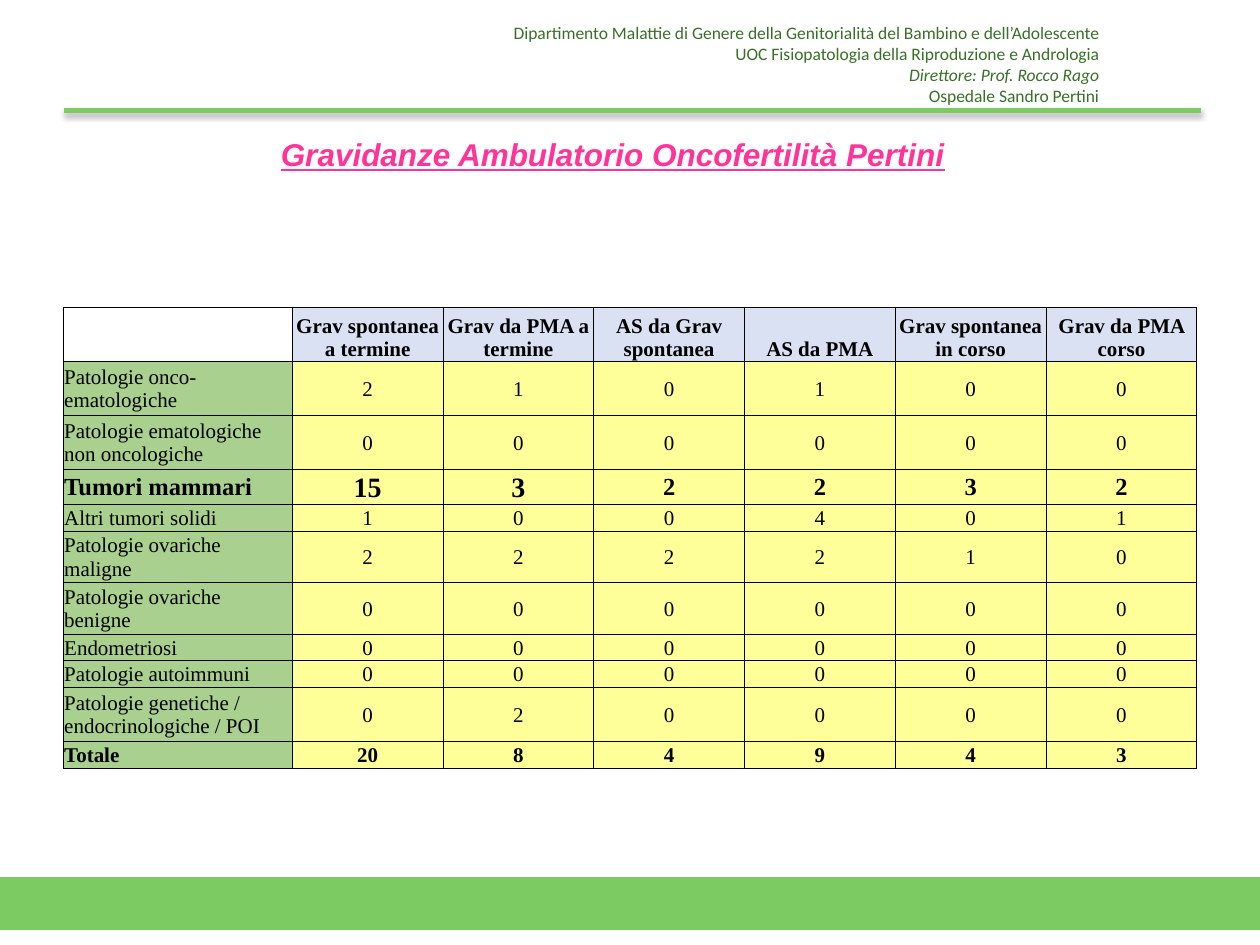
import pptx
import pptx.util
import pptx.dml.color
import pptx.enum.shapes
import pptx.enum.text
import pptx.oxml
import pptx.oxml.ns

THEME = {
    "green": "7CCA62", "letterhead": "387026", "title": "FF3399", "ink": "000000",
    "heading_fill": "D9E1F2", "label_fill": "A9D08E", "count_fill": "FFFF99",
    "letterhead_font": "Calibri", "title_font": "Arial", "table_font": "Times New Roman",
    "letterhead_size": 10, "title_size": 18, "table_size": 12,
    "strong_size": 14, "peak_size": 16,
}

LETTERHEAD = [
    "Dipartimento Malattie di Genere della Genitorialità del Bambino e dell’Adolescente",
    "UOC Fisiopatologia della Riproduzione e Andrologia",
    "Direttore: Prof. Rocco Rago",
    "Ospedale Sandro Pertini",
]
DIRECTOR = LETTERHEAD[2]
TITLE = "Gravidanze Ambulatorio Oncofertilità Pertini"
HEADINGS = ["", "Grav spontanea a termine", "Grav da PMA a termine", "AS da Grav spontanea",
            "AS da PMA", "Grav spontanea in corso", "Grav da PMA corso"]
PATHOLOGIES = [
    ("Patologie onco-ematologiche", 2, 1, 0, 1, 0, 0),
    ("Patologie ematologiche non oncologiche", 0, 0, 0, 0, 0, 0),
    ("Tumori mammari", 15, 3, 2, 2, 3, 2),
    ("Altri tumori solidi", 1, 0, 0, 4, 0, 1),
    ("Patologie ovariche maligne", 2, 2, 2, 2, 1, 0),
    ("Patologie ovariche benigne", 0, 0, 0, 0, 0, 0),
    ("Endometriosi", 0, 0, 0, 0, 0, 0),
    ("Patologie autoimmuni", 0, 0, 0, 0, 0, 0),
    ("Patologie genetiche / endocrinologiche / POI", 0, 2, 0, 0, 0, 0),
    ("Totale", 20, 8, 4, 9, 4, 3),
]
HIGHLIGHT, TOTAL = 3, len(PATHOLOGIES)
ROW_HEIGHTS = [0.43, 0.43, 0.43, 0.27, 0.21, 0.41, 0.41, 0.21, 0.21, 0.43, 0.21]
WIDTH, HEIGHT = 10, 7.5
TABLE_WIDTH, LABEL_WIDTH = 0.9 * WIDTH, 1.82

Inches, Pt = pptx.util.Inches, pptx.util.Pt
ALIGN, ANCHOR = pptx.enum.text.PP_ALIGN, pptx.enum.text.MSO_ANCHOR


def colour(name):
    return pptx.dml.color.RGBColor.from_string(THEME[name])


def share(left, top, width, height):
    return [Inches(part * side) for part, side in
            zip((left, top, width, height), (WIDTH, HEIGHT, WIDTH, HEIGHT))]


def style(paragraph, face, size, ink, bold=False, italic=False, align=ALIGN.LEFT):
    paragraph.alignment = align
    font = paragraph.font
    font.name, font.size = THEME[face], Pt(THEME[size])
    font.color.rgb = colour(ink)
    font.bold, font.italic = bold, italic


def add_band(slide):
    band = slide.shapes.add_shape(pptx.enum.shapes.MSO_SHAPE.RECTANGLE,
                                  *share(0, 0.93, 1, 0.052))
    band.shadow.inherit = False
    band.fill.solid()
    band.fill.fore_color.rgb = band.line.color.rgb = colour("green")
    band.line.width = Pt(2)


def add_rule(slide):
    left, top, width, _ = share(0.051, 0.117, 0.902, 0)
    rule = slide.shapes.add_connector(pptx.enum.shapes.MSO_CONNECTOR.STRAIGHT,
                                      left, top, left + width, top)
    rule.line.color.rgb = colour("green")
    rule.line.width = Pt(3)
    rule._element.spPr.append(pptx.oxml.parse_xml(
        f'<a:effectLst {pptx.oxml.ns.nsdecls("a")}>'
        '<a:outerShdw blurRad="40000" dist="23000" dir="5400000" rotWithShape="0">'
        f'<a:srgbClr val="{THEME["ink"]}"><a:alpha val="35000"/></a:srgbClr>'
        '</a:outerShdw></a:effectLst>'))


def add_texts(slide):
    letterhead = slide.shapes.add_textbox(*share(0.383, 0.017, 0.499, 0.124)).text_frame
    letterhead.word_wrap = True
    letterhead.text = "\n".join(LETTERHEAD)
    for paragraph in letterhead.paragraphs:
        style(paragraph, "letterhead_font", "letterhead_size", "letterhead",
              italic=paragraph.text == DIRECTOR, align=ALIGN.RIGHT)

    title = slide.shapes.add_textbox(*share(0.213, 0.136, 0.549, 0.053)).text_frame
    title.word_wrap = False
    title.text = TITLE
    style(title.paragraphs[0], "title_font", "title_size", "title", bold=True, italic=True)
    title.paragraphs[0].font.underline = True


def add_borders(cell):
    properties = cell._tc.get_or_add_tcPr()
    for side in ("lnL", "lnR", "lnT", "lnB"):
        properties.append(pptx.oxml.parse_xml(
            f'<a:{side} {pptx.oxml.ns.nsdecls("a")} w="6350"><a:solidFill>'
            f'<a:srgbClr val="{THEME["ink"]}"/></a:solidFill></a:{side}>'))


def count_size(row, column):
    if row != HIGHLIGHT:
        return "table_size"
    return "peak_size" if column in (1, 2) else "strong_size"


def add_pregnancies(slide):
    rows = [HEADINGS, *PATHOLOGIES]
    frame = slide.shapes.add_table(len(rows), len(HEADINGS),
                                   *share(0.05, 0.325, 0.9, sum(ROW_HEIGHTS) / HEIGHT))
    table = frame.table
    table.first_row = table.horz_banding = False
    count_width = (TABLE_WIDTH - LABEL_WIDTH) / (len(HEADINGS) - 1)
    for index, column in enumerate(table.columns):
        column.width = Inches(count_width if index else LABEL_WIDTH)
    for row, (height, entries) in enumerate(zip(ROW_HEIGHTS, rows)):
        table.rows[row].height = Inches(height)
        for column, entry in enumerate(entries):
            cell = table.cell(row, column)
            add_borders(cell)
            cell.margin_left = cell.margin_right = cell.margin_top = Inches(0.01)
            cell.margin_bottom = 0
            cell.vertical_anchor = ANCHOR.MIDDLE if row else ANCHOR.BOTTOM
            cell.text = str(entry)
            style(cell.text_frame.paragraphs[0], "table_font", count_size(row, column), "ink",
                  bold=row in (0, HIGHLIGHT, TOTAL),
                  align=ALIGN.CENTER if column else ALIGN.LEFT)
            if row == column == 0:
                cell.fill.background()
                continue
            cell.fill.solid()
            cell.fill.fore_color.rgb = colour(
                "heading_fill" if row == 0 else "count_fill" if column else "label_fill")


def main():
    deck = pptx.Presentation()
    deck.slide_width, deck.slide_height = Inches(WIDTH), Inches(HEIGHT)
    slide = deck.slides.add_slide(deck.slide_layouts[6])
    add_band(slide)
    add_rule(slide)
    add_texts(slide)
    add_pregnancies(slide)
    deck.save("out.pptx")


if __name__ == "__main__":
    main()
